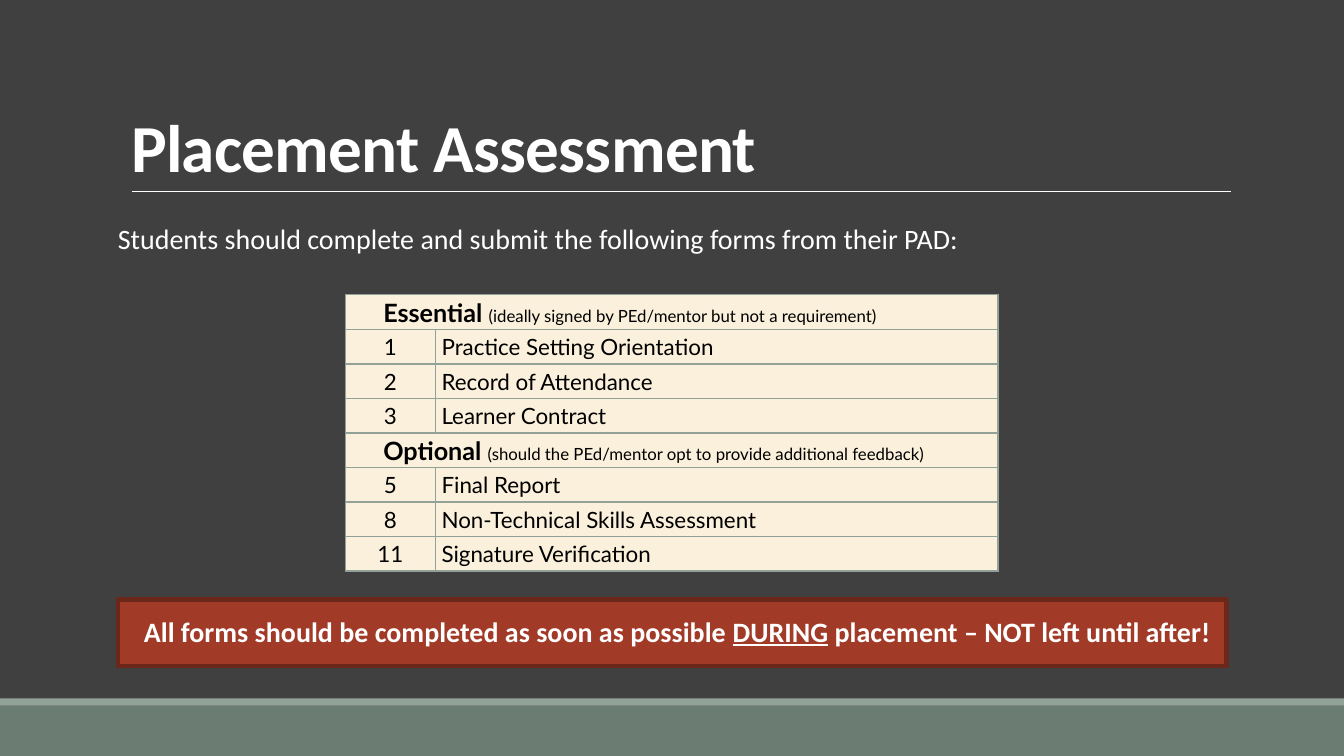
from dataclasses import dataclass

from lxml.etree import SubElement
from pptx import Presentation
from pptx.dml.color import RGBColor
from pptx.enum.shapes import MSO_CONNECTOR, MSO_SHAPE
from pptx.enum.text import MSO_ANCHOR, MSO_AUTO_SIZE, PP_ALIGN
from pptx.oxml.ns import qn
from pptx.util import Cm, Pt


@dataclass(frozen=True)
class Theme:
    background: RGBColor = RGBColor.from_string("404040")
    text: RGBColor = RGBColor.from_string("FFFFFF")
    table_text: RGBColor = RGBColor.from_string("000000")
    table_fill: RGBColor = RGBColor.from_string("FAF0DB")
    sage: RGBColor = RGBColor.from_string("93A299")
    dark_sage: RGBColor = RGBColor.from_string("6B7D72")
    alert: RGBColor = RGBColor.from_string("A23A28")
    alert_line: RGBColor = RGBColor.from_string("6C271B")
    font: str = "Calibri"
    table_font: str = "Lato"
    title_size: Pt = Pt(48)
    body_size: Pt = Pt(20)
    heading_size: Pt = Pt(18)
    row_size: Pt = Pt(16)
    note_size: Pt = Pt(12)


theme = Theme()


def add_run(p, text, color, **font):
    r = p.add_run()
    r.text = text
    r.font.color.rgb = color
    for name, value in font.items():
        setattr(r.font, name, value)
    return r


def add_box(left, top, width, height, fill):
    sp = slide.shapes.add_shape(
        MSO_SHAPE.RECTANGLE, Cm(left), Cm(top), Cm(width), Cm(height))
    sp.shadow.inherit = False
    sp.fill.solid()
    sp.fill.fore_color.rgb = fill
    sp.line.fill.background()
    return sp


prs = Presentation()
prs.slide_width, prs.slide_height = Cm(33.87), Cm(19.05)
slide = prs.slides.add_slide(prs.slide_layouts[1])
slide.background.fill.solid()
slide.background.fill.fore_color.rgb = theme.background

# Footer bands and title rule
add_box(0, 17.78, 33.87, 1.27, theme.dark_sage)
add_box(0, 17.6, 33.87, 0.18, theme.sage)
rule = slide.shapes.add_connector(
    MSO_CONNECTOR.STRAIGHT, Cm(3.33), Cm(4.82), Cm(31.01), Cm(4.82))
rule.line.color.rgb = theme.text
rule.line.width = Pt(0.5)
SubElement(rule._element.spPr, qn("a:effectLst"))

# Title and introduction
title, body = slide.placeholders
title.left, title.top, title.width, title.height = Cm(3.05), Cm(0.79), Cm(27.94), Cm(4.04)
tf = title.text_frame
tf.auto_size = MSO_AUTO_SIZE.NONE
tf.vertical_anchor = MSO_ANCHOR.BOTTOM
p = tf.paragraphs[0]
p.alignment = PP_ALIGN.LEFT
p.line_spacing = 0.85
r = add_run(p, "Placement Assessment", theme.text,
            name=theme.font, size=theme.title_size, bold=True)
r._r.get_or_add_rPr().set("spc", "-50")

body.left, body.top, body.width, body.height = Cm(2.97), Cm(5.56), Cm(27.94), Cm(1.4)
tf = body.text_frame
tf.auto_size = MSO_AUTO_SIZE.NONE
tf.margin_left = tf.margin_right = 0
p = tf.paragraphs[0]
for name, value in {"line_spacing": 0.9, "space_before": Pt(24), "space_after": Pt(2)}.items():
    setattr(p, name, value)
pPr = p._p.get_or_add_pPr()
pPr.set("marL", "0")
pPr.set("indent", "0")
SubElement(pPr, qn("a:buNone"))
add_run(p, "Students should complete and submit the following forms from their PAD:",
        theme.text, name=theme.font, size=theme.body_size)

# Forms table: a heading row spans both columns
sections = [
    ("Essential ", "(ideally signed by PEd/mentor but not a requirement)",
     [("1", "Practice Setting Orientation"), ("2", "Record of Attendance"),
      ("3", "Learner Contract")]),
    ("Optional ", "(should the PEd/mentor opt to provide additional feedback)",
     [("5", "Final Report"), ("8", "Non-Technical Skills Assessment"),
      ("11", "Signature Verification")]),
]
row_count = sum(1 + len(forms) for _, _, forms in sections)
row_height = 0.87
table = slide.shapes.add_table(
    row_count, 2, Cm(8.71), Cm(7.43), Cm(16.44), Cm(row_height * row_count)).table
for column, width in zip(table.columns, (2.26, 14.18)):
    column.width = Cm(width)
for row in table.rows:
    row.height = Cm(row_height)

for cell in table.iter_cells():
    tcPr = cell._tc.get_or_add_tcPr()
    for side in ("lnL", "lnR", "lnT", "lnB"):
        ln = SubElement(tcPr, qn(f"a:{side}"), w=str(Pt(1)))
        SubElement(SubElement(ln, qn("a:solidFill")), qn("a:srgbClr"), val=str(theme.sage))
    cell.fill.solid()
    cell.fill.fore_color.rgb = theme.table_fill
    cell.vertical_anchor = MSO_ANCHOR.MIDDLE
    cell.margin_left = cell.margin_right = cell.margin_top = Cm(0.02)
    cell.margin_bottom = 0

i = 0
for heading, note, forms in sections:
    cell = table.cell(i, 0)
    cell.merge(table.cell(i, 1))
    cell.margin_left = Cm(0.95)
    p = cell.text_frame.paragraphs[0]
    for text, size, bold in ((heading, theme.heading_size, True), (note, theme.note_size, False)):
        add_run(p, text, theme.table_text, name=theme.table_font, size=size, bold=bold)
    for i, form in enumerate(forms, i + 1):
        for j, text in enumerate(form):
            p = table.cell(i, j).text_frame.paragraphs[0]
            add_run(p, text, theme.table_text,
                    name=theme.table_font, size=theme.row_size, bold=False)
        table.cell(i, 0).text_frame.paragraphs[0].alignment = PP_ALIGN.CENTER
        table.cell(i, 1).margin_left = Cm(0.16)
    i += 1

# Reminder banner
banner = add_box(2.97, 15.11, 27.94, 1.68, theme.alert)
banner.line.color.rgb = theme.alert_line
banner.line.width = Pt(3)
tf = banner.text_frame
tf.word_wrap = True
tf.vertical_anchor = MSO_ANCHOR.MIDDLE
tf.margin_left, tf.margin_right = Cm(0.25), 0
p = tf.paragraphs[0]
for name, value in {"alignment": PP_ALIGN.CENTER, "line_spacing": 0.9,
                    "space_after": Pt(2)}.items():
    setattr(p, name, value)
for text, underline in (("All forms should be completed as soon as possible ", False),
                        ("DURING", True),
                        (" placement – NOT left until after!", False)):
    add_run(p, text, theme.text, name=theme.font, size=theme.body_size,
            bold=True, underline=underline)

prs.save("out.pptx")
